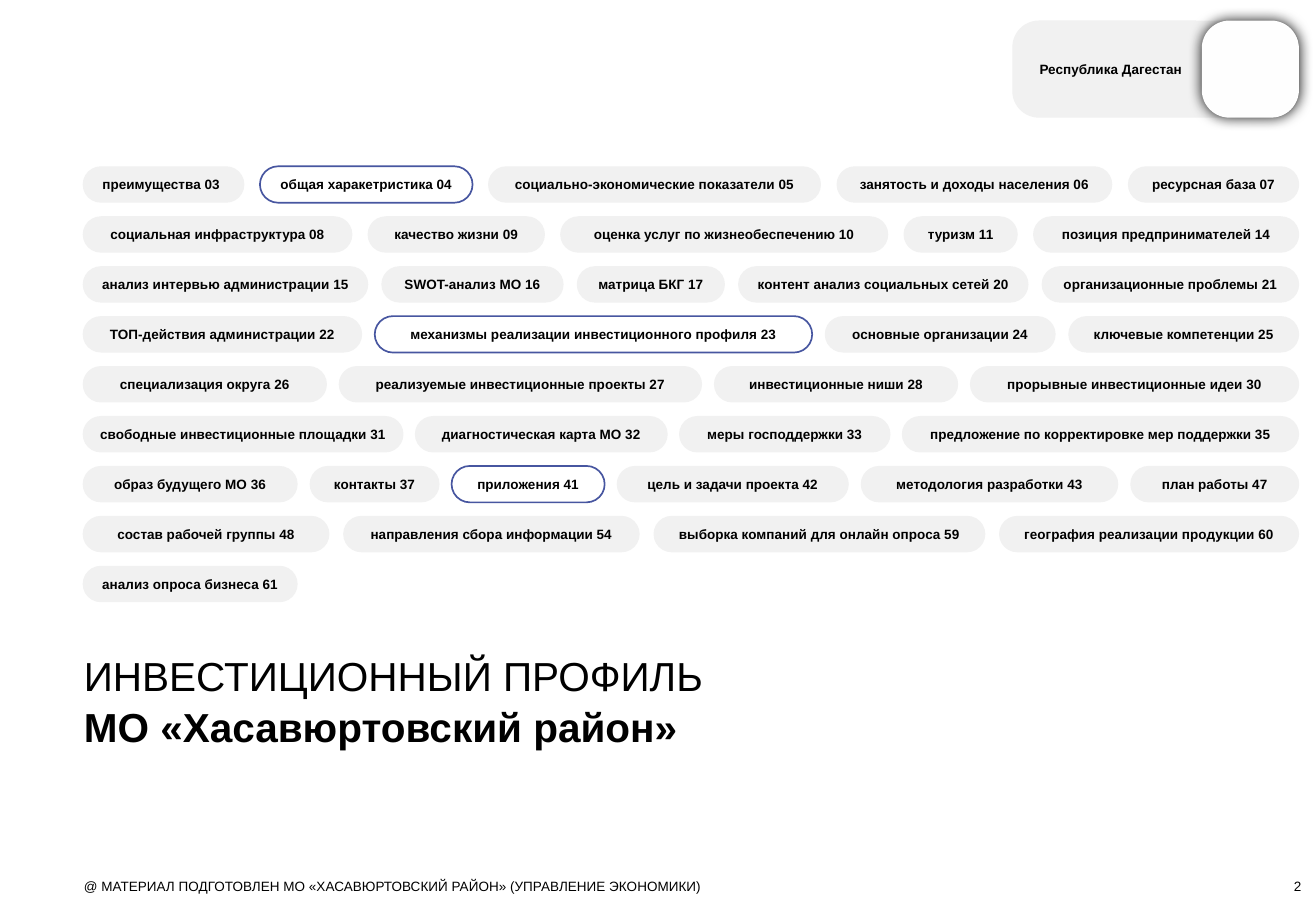
from lxml.etree import SubElement
from pptx import Presentation
from pptx.dml.color import RGBColor
from pptx.enum.shapes import MSO_SHAPE
from pptx.enum.text import MSO_ANCHOR, MSO_AUTO_SIZE, PP_ALIGN
from pptx.oxml.ns import qn
from pptx.util import Pt

BLACK = RGBColor(0x00, 0x00, 0x00)
GREY = RGBColor(0xF1, 0xF1, 0xF1)
WHITE = RGBColor(0xFE, 0xFE, 0xFE)
BLUE = RGBColor(0x47, 0x56, 0xA0)

LEFT, RIGHT, TOP = 49, 769.8, 98.6
PITCH, HEIGHT = 29.6, 21.6

# Width and label of each tab; every row spans LEFT to RIGHT.
ROWS = [
    [(95.8, "преимущества 03"), (126, "общая харакетристика 04"),
     (197.3, "социально-экономические показатели 05"),
     (163.4, "занятость и доходы населения 06"), (101.5, "ресурсная база 07")],
    [(159.8, "социальная инфраструктура 08"), (105.1, "качество жизни 09"),
     (194.4, "оценка услуг по жизнеобеспечению 10"), (67.7, "туризм 11"),
     (157.7, "позиция предпринимателей 14")],
    [(169.2, "анализ интервью администрации 15"), (108, "SWOT-анализ МО 16"),
     (87.8, "матрица БКГ 17"), (172.1, "контент анализ социальных сетей 20"),
     (152.6, "организационные проблемы 21")],
    [(165.6, "ТОП-действия администрации 22"),
     (259.2, "механизмы реализации инвестиционного профиля 23"),
     (136.8, "основные организации 24"), (136.8, "ключевые компетенции 25")],
    [(144.7, "специализация округа 26"),
     (215.3, "реализуемые инвестиционные проекты 27"),
     (144.7, "инвестиционные ниши 28"),
     (195.1, "прорывные инвестиционные идеи 30")],
    [(190.1, "свободные инвестиционные площадки 31"),
     (149.8, "диагностическая карта МО 32"), (125.3, "меры господдержки 33"),
     (235.4, "предложение по корректировке мер поддержки 35")],
    [(127.4, "образ будущего МО 36"), (77, "контакты 37"),
     (90.7, "приложения 41"), (137.5, "цель и задачи проекта 42"),
     (152.6, "методология разработки 43"), (100.1, "план работы 47")],
    [(146.2, "состав рабочей группы 48"),
     (175.7, "направления сбора информации 54"),
     (196.6, "выборка компаний для онлайн опроса 59"),
     (177.8, "география реализации продукции 60")],
    [(127.4, "анализ опроса бизнеса 61")],
]
HEADS = {"общая харакетристика 04", "приложения 41",
         "механизмы реализации инвестиционного профиля 23"}
FIRST = ROWS[0][0][1]


def apply(target, values):
    for name, value in values.items():
        setattr(target, name, value)


class Page:
    font = {"name": "Arial", "size": Pt(8), "bold": False}
    frame = {"word_wrap": True, "vertical_anchor": MSO_ANCHOR.MIDDLE,
             "margin_left": 0, "margin_top": 0,
             "margin_right": 0, "margin_bottom": 0}

    def __init__(self, slide):
        self.slide = slide

    def letter(self, shape, lines, align=PP_ALIGN.LEFT, space=1.0, frame=None):
        """Fill a shape with lines, each a pair of text and font values."""
        body = shape.text_frame
        apply(body, {**self.frame, **(frame or {})})
        for i, (text, font) in enumerate(lines):
            para = body.add_paragraph() if i else body.paragraphs[0]
            apply(para, {"alignment": align, "line_spacing": space})
            run = para.add_run()
            run.text = text
            apply(run.font, {**self.font, **font})
            run.font.color.rgb = BLACK

    def label(self, box, lines, **style):
        shape = self.slide.shapes.add_textbox(*map(Pt, box))
        self.letter(shape, lines, **style)

    def pill(self, box, fill=None, line=None, curve=0.5):
        shape = self.slide.shapes.add_shape(
            MSO_SHAPE.ROUNDED_RECTANGLE, *map(Pt, box))
        shape.adjustments[0] = curve
        shape.shadow.inherit = False
        if fill is None:
            shape.fill.background()
        else:
            shape.fill.solid()
            shape.fill.fore_color.rgb = fill
        if line is None:
            shape.line.fill.background()
        else:
            shape.line.color.rgb = line
            shape.line.width = Pt(1)
        return shape

    def tab(self, box, text):
        colour = {"line": BLUE} if text in HEADS else {"fill": GREY}
        style = {"align": PP_ALIGN.CENTER}
        if text == FIRST:
            style = {"frame": {"margin_left": Pt(8.6)}}
        self.letter(self.pill(box, **colour), [(text, {"bold": True})], **style)

    def row(self, top, tabs):
        """Place tabs side by side with equal gaps over the full width."""
        free = RIGHT - LEFT - sum(width for width, _ in tabs)
        gap = free / max(len(tabs) - 1, 1)
        left = LEFT
        for width, text in tabs:
            self.tab((left, top, width, HEIGHT), text)
            left += width + gap

    def glow(self, shape):
        """Add a soft shadow on all sides."""
        effects = shape.element.spPr.find(qn("a:effectLst"))
        outer = SubElement(effects, qn("a:outerShdw"), blurRad=str(Pt(8.4)),
                           dist="0", dir="0", algn="ctr", rotWithShape="0")
        colour = SubElement(outer, qn("a:srgbClr"), val=str(BLACK))
        SubElement(colour, qn("a:alpha"), val="92000")


def main():
    deck = Presentation()
    apply(deck, {"slide_width": Pt(779.76), "slide_height": Pt(540)})
    page = Page(deck.slides.add_slide(deck.slide_layouts[6]))

    for i, tabs in enumerate(ROWS):
        page.row(TOP + i * PITCH, tabs)

    grow = {"vertical_anchor": MSO_ANCHOR.TOP,
            "auto_size": MSO_AUTO_SIZE.SHAPE_TO_FIT_TEXT}
    page.label((713.5, 520.6, 57.6, 9.4), [("2", {})], align=PP_ALIGN.RIGHT,
               frame={"vertical_anchor": MSO_ANCHOR.BOTTOM})
    page.label((49.7, 520.6, 576, 9.4),
               [("@ МАТЕРИАЛ ПОДГОТОВЛЕН МО «ХАСАВЮРТОВСКИЙ РАЙОН» "
                 "(УПРАВЛЕНИЕ ЭКОНОМИКИ)", {})], frame=grow)
    page.label((49.7, 384.5, 576, 58.3),
               [("ИНВЕСТИЦИОННЫЙ ПРОФИЛЬ", {"size": Pt(24)}),
                ("МО «Хасавюртовский район»", {"size": Pt(24), "bold": True})],
               space=1.05, frame=grow)

    region = page.pill((599.8, 12.2, 170, 57.6), fill=GREY, curve=0.275)
    page.letter(region, [("Республика Дагестан", {"bold": True})],
                frame={"margin_left": Pt(11.5), "margin_right": Pt(56.9)})
    page.glow(page.pill((712.1, 12.2, 57.6, 57.6), fill=WHITE, curve=0.286))

    deck.save("out.pptx")


if __name__ == "__main__":
    main()
